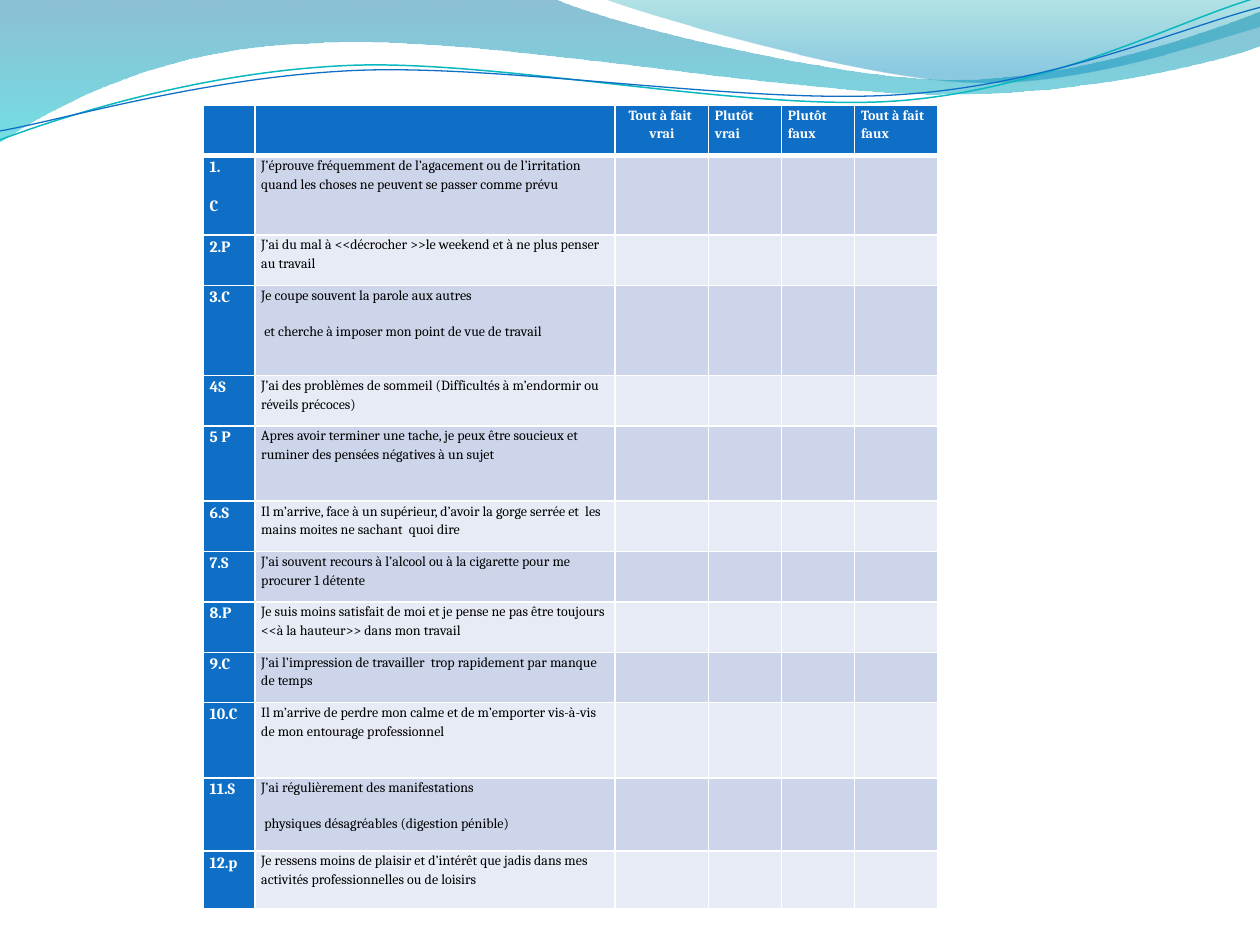
from math import cos, radians, sin

from lxml import etree
from pptx import Presentation
from pptx.dml.color import RGBColor
from pptx.enum import text
from pptx.oxml import ns
from pptx.util import Pt

BLUE = RGBColor(0x0F, 0x6F, 0xC6)
TEAL = RGBColor(0x0A, 0xB8, 0xBF)
WHITE = RGBColor(0xFF, 0xFF, 0xFF)
BLACK = RGBColor(0, 0, 0)
BANDS = RGBColor(0xCC, 0xD5, 0xEA), RGBColor(0xE7, 0xEB, 0xF5)

# Gradient stops: position %, colour, opacity %
DEEP = [(0, RGBColor(0x00, 0x74, 0xA1), 45), (100, RGBColor(0x00, 0xC6, 0xCF), 55)]
PALE = [(0, RGBColor(0x00, 0xA1, 0xA9), 30), (80, RGBColor(0x00, 0x8B, 0xBF), 45)]

# Outlines in points: two numbers draw a line, six draw a curve
WAVES = [
    (DEEP, [(0, 0), (316.8, -0.7),
            (342.7, 12.2, 478.1, 45.4, 545.8, 45.4),
            (614.2, 45.4, 689.8, 18.7, 720, 6.5), (720.7, 25.9),
            (707.8, 31.7, 626.4, 54.7, 537.1, 54),
            (447.8, 54, 275, 20.2, 185, 24.5),
            (92.9, 25.9, 33.1, 59.8, -0.7, 81.4), (0, 0)]),
    (PALE, [(344.9, -0.7), (366.5, 7.9, 491, 44.6, 553.7, 46.8),
            (616.3, 49.7, 691.9, 23, 720, 15.1), (720, 0), (344.9, -0.7)]),
]
TILT = 357.3
# Colour, width, centre, outline
LINES = [
    (TEAL, 0.85, (359.3, 41.4),
     [(0, 79.9), (34.6, 67, 113.8, 41, 199.4, 37.4),
      (284.4, 33.8, 427, 64.1, 513.4, 57.6),
      (599.8, 51.1, 675.4, 10.8, 718.6, -1.4)]),
    (BLUE, 0.75, (361.1, 42.5),
     [(0, 74.9), (33.8, 69.1, 118.1, 43.9, 203.8, 40.3),
      (290.2, 36.7, 429.8, 60.5, 516.2, 54),
      (601.9, 48.2, 677.5, 15.1, 720, 4.3)]),
]

COLS = [29.5, 205.9, 53.3, 41.8, 41.8, 47.5]
HEADS = ["", "", "Tout à fait  vrai", "Plutôt vrai", "Plutôt faux", "Tout à fait faux"]
LOW = 28.8
# Row height, code, statement; a list holds one paragraph per item
ITEMS = [
    (45.4, ["1.", "C"], ["J’éprouve fréquemment de l’agacement ou de l’irritation quand les choses ne peuvent se passer comme prévu"]),
    (LOW, ["2.P"], ["J’ai du mal à <<décrocher >>le weekend et à ne plus penser au travail"]),
    (51.5, ["3.C"], ["Je coupe souvent la parole aux autres", " et cherche à imposer mon point de vue de travail"]),
    (LOW, ["4S"], ["J’ai des problèmes de sommeil (Difficultés à m’endormir ou réveils précoces)"]),
    (43, ["5 P"], ["Apres avoir terminer une tache, je peux être soucieux et ruminer des pensées négatives à un sujet"]),
    (LOW, ["6.S"], ["Il m’arrive, face à un supérieur, d’avoir la gorge serrée et  les mains moites ne sachant  quoi dire"]),
    (LOW, ["7.S"], ["J’ai souvent recours à l’alcool ou à la cigarette pour me procurer 1 détente"]),
    (LOW, ["8.P"], ["Je suis moins satisfait de moi et je pense ne pas être toujours <<à la hauteur>> dans mon travail"]),
    (LOW, ["9.C"], ["J’ai l’impression de travailler  trop rapidement par manque de temps"]),
    (43, ["10.C"], ["Il m’arrive de perdre mon calme et de m’emporter vis-à-vis de mon entourage professionnel"]),
    (41.8, ["11.S"], ["J’ai régulièrement des manifestations", " physiques désagréables (digestion pénible)"]),
    (33.1, ["12.p"], ["Je ressens moins de plaisir et d’intérêt que jadis dans mes activités professionnelles ou de loisirs"]),
]


def turn(pts, mid, angle):
    c, s = cos(radians(angle)), sin(radians(angle))
    near = [(x - mid[0], y - mid[1]) for x, y in pts]
    return [(mid[0] + x * c - y * s, mid[1] + x * s + y * c) for x, y in near]


def bend(shape, parts):
    """Join the three points of each curve into one cubic segment."""
    legs = iter(list(shape._element.iter(ns.qn("a:lnTo"))))
    for part in parts[1:]:
        leg = next(legs)
        if len(part) == 6:
            curve = etree.Element(ns.qn("a:cubicBezTo"))
            leg.addprevious(curve)
            for old in (leg, next(legs), next(legs)):
                curve.append(old[0])
                old.getparent().remove(old)


def outline(shapes, box, parts, close, mid=(0, 0), angle=0):
    pts = [part[i:i + 2] for part in parts for i in range(0, len(part), 2)]
    spots = [(Pt(box[0] + x), Pt(box[1] + y)) for x, y in turn(pts, mid, angle)]
    pen = shapes.build_freeform(*spots[0], scale=1.0)
    pen.add_line_segments(spots[1:], close=close)
    shape = pen.convert_to_shape()
    bend(shape, parts)
    shape.shadow.inherit = False
    return shape


def shade(shape, stops):
    """Fill from top to bottom with part-clear colours."""
    shape.fill.background()
    old = shape._element.spPr.find(ns.qn("a:noFill"))
    grad = etree.Element(ns.qn("a:gradFill"), rotWithShape="1")
    row = etree.SubElement(grad, ns.qn("a:gsLst"))
    for pos, color, alpha in stops:
        stop = etree.SubElement(row, ns.qn("a:gs"), pos=str(pos * 1000))
        tint = etree.SubElement(stop, ns.qn("a:srgbClr"), val=str(color))
        etree.SubElement(tint, ns.qn("a:alpha"), val=str(alpha * 1000))
    etree.SubElement(grad, ns.qn("a:lin"), ang="5400000", scaled="0")
    old.getparent().replace(old, grad)


def banner(slide, box):
    for stops, parts in WAVES:
        wave = outline(slide.shapes, box, parts, True)
        shade(wave, stops)
        wave.line.fill.background()
    group = slide.shapes.add_group_shape()
    for color, width, mid, parts in LINES:
        line = outline(group.shapes, box, parts, False, mid, 360 - TILT)
        line.rotation = TILT
        line.fill.background()
        line.line.color.rgb = color
        line.line.width = Pt(width)


def border(cell, widths):
    props = cell._tc.get_or_add_tcPr()
    for i, (side, width) in enumerate(widths.items()):
        edge = etree.Element(ns.qn("a:ln" + side), w=str(Pt(width)))
        fill = etree.SubElement(edge, ns.qn("a:solidFill"))
        etree.SubElement(fill, ns.qn("a:srgbClr"), val=str(WHITE))
        props.insert(i, edge)


def write(cell, paras, look, align):
    frame = cell.text_frame
    for i, words in enumerate(paras):
        para = frame.add_paragraph() if i else frame.paragraphs[0]
        para.alignment = align
        para.line_spacing = 1.15
        para.space_after = Pt(10)
        run = para.add_run()
        run.text = words
        run.font.color.rgb = look["color"]
        for key in ("name", "size", "bold"):
            setattr(run.font, key, look[key])


def survey(slide, box):
    rows = [(LOW, [[head] if head else [] for head in HEADS])]
    rows += [(high, [code, words, [], [], [], []]) for high, code, words in ITEMS]
    size = sum(COLS), sum(row[0] for row in rows)
    table = slide.shapes.add_table(len(rows), len(COLS), *map(Pt, box + size)).table
    for col, width in zip(table.columns, COLS):
        col.width = Pt(width)
    pads = {"margin_left": Pt(3.6), "margin_right": Pt(3.6),
            "margin_top": 0, "margin_bottom": 0}
    for r, (high, cells) in enumerate(rows):
        table.rows[r].height = Pt(high)
        for c, paras in enumerate(cells):
            cell = table.cell(r, c)
            for key, val in pads.items():
                setattr(cell, key, val)
            dark = r == 0 or c == 0
            cell.fill.solid()
            cell.fill.fore_color.rgb = BLUE if dark else BANDS[(r - 1) % 2]
            border(cell, {"L": 1, "R": 1, "T": 3 if r == 1 else 1, "B": 1 if r else 3})
            look = {"name": "Cambria", "size": Pt(9 if r and c == 0 else 8),
                    "bold": dark, "color": WHITE if dark else BLACK}
            mid = r == 0 and c == 2
            write(cell, paras, look, text.PP_ALIGN.CENTER if mid else text.PP_ALIGN.LEFT)


def main():
    deck = Presentation()
    deck.slide_width, deck.slide_height = Pt(720), Pt(540)
    slide = deck.slides.add_slide(deck.slide_layouts[6])
    banner(slide, (0, 0))
    survey(slide, (116.2, 60.1))
    deck.save("out.pptx")


if __name__ == "__main__":
    main()
